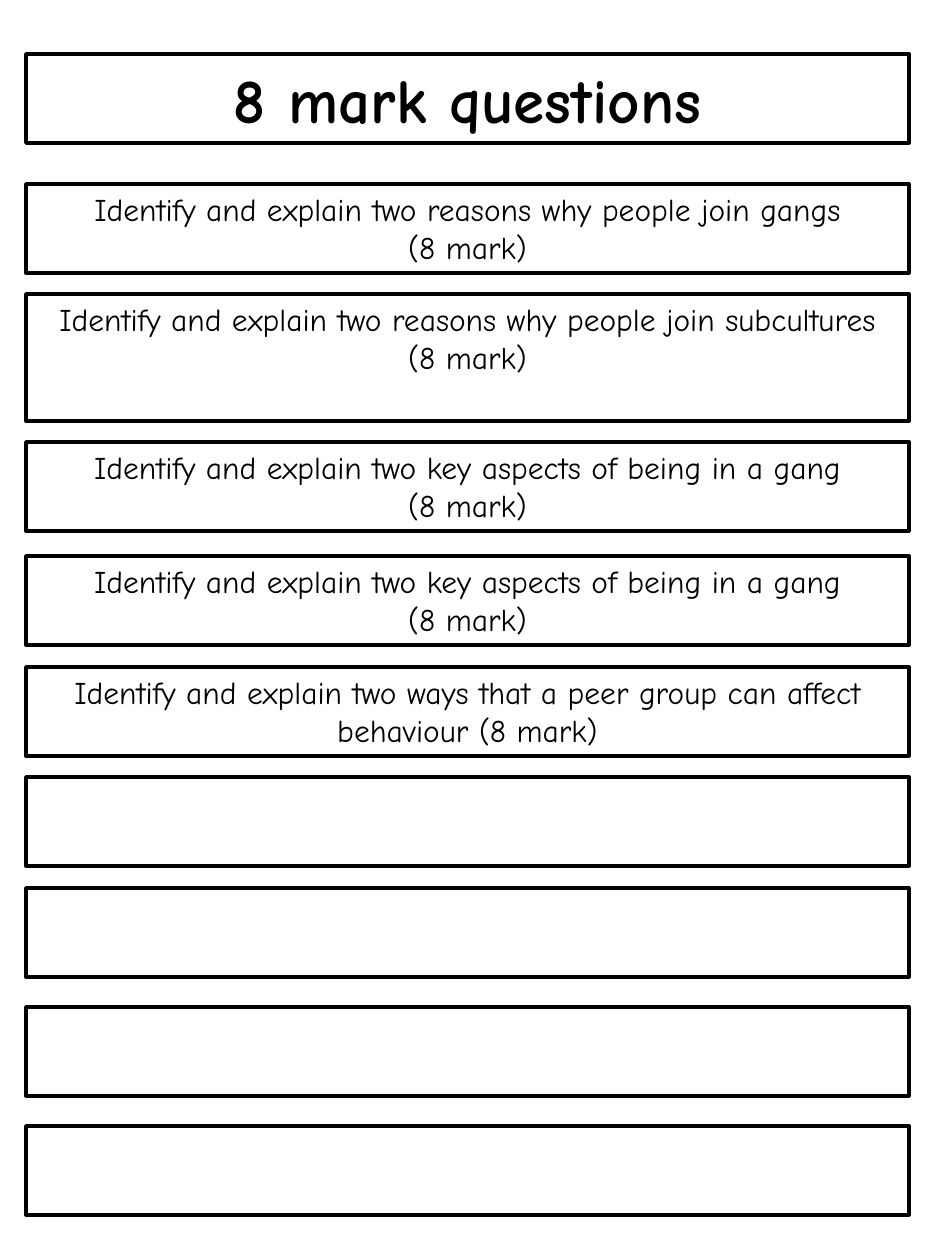
from pptx import Presentation
from pptx.dml.color import RGBColor
from pptx.enum.shapes import MSO_SHAPE
from pptx.enum.text import MSO_ANCHOR, MSO_AUTO_SIZE, PP_ALIGN
from pptx.util import Pt

RECT = MSO_SHAPE.RECTANGLE
TOP = MSO_ANCHOR.TOP
FIXED = MSO_AUTO_SIZE.NONE
CENTER = PP_ALIGN.CENTER

TITLE = "8 mark questions"
GANG = "Identify and explain two key aspects of being in a gang\n(8 mark)"
LOW, TALL = 89, 127
TITLE_TOP = 54
# top, height, text; the last four boxes are left blank to write in
BOXES = [
    (184, LOW, "Identify and explain two reasons why people join gangs\n(8 mark)"),
    (294, TALL, "Identify and explain two reasons why people join subcultures\n(8 mark)"),
    (442, LOW, GANG),
    (556, LOW, GANG),
    (667, LOW, "Identify and explain two ways that a peer group can affect behaviour (8 mark)"),
    (777, LOW, ""),
    (888, LOW, ""),
    (1007, LOW, ""),
    (1126, LOW, ""),
]


class Theme:
    font = "Comic Neue"
    ink = RGBColor(0, 0, 0)
    paper = RGBColor(255, 255, 255)
    line = Pt(2)
    head = Pt(36)
    body = Pt(18)


PX = 914400 // 126
WIDE, HIGH = 945, 1260
LEFT, WIDTH = 26, 883


def place(top, height):
    return [n * PX for n in (LEFT, top, WIDTH, height)]


def dress(shape, text, size, bold=False):
    """Give a box its fill, border and centred text."""
    shape.fill.solid()
    shape.fill.fore_color.rgb = Theme.paper
    shape.line.color.rgb = Theme.ink
    shape.line.width = Theme.line
    frame = shape.text_frame
    frame.word_wrap = True
    frame.auto_size = FIXED
    frame.vertical_anchor = TOP
    frame.text = text
    for para in frame.paragraphs:
        para.alignment = CENTER
        for run in para.runs:
            font = run.font
            font.name = Theme.font
            font.size = size
            font.bold = bold
            font.color.rgb = Theme.ink


def main():
    deck = Presentation()
    deck.slide_width, deck.slide_height = WIDE * PX, HIGH * PX
    slide = deck.slides.add_slide(deck.slide_layouts[5])

    title = slide.shapes.title
    title.left, title.top, title.width, title.height = place(TITLE_TOP, LOW)
    dress(title, TITLE, Theme.head, bold=True)

    for top, height, text in BOXES:
        box = slide.shapes.add_shape(RECT, *place(top, height))
        box.shadow.inherit = False
        dress(box, text, Theme.body)

    deck.save("out.pptx")


if __name__ == "__main__":
    main()
